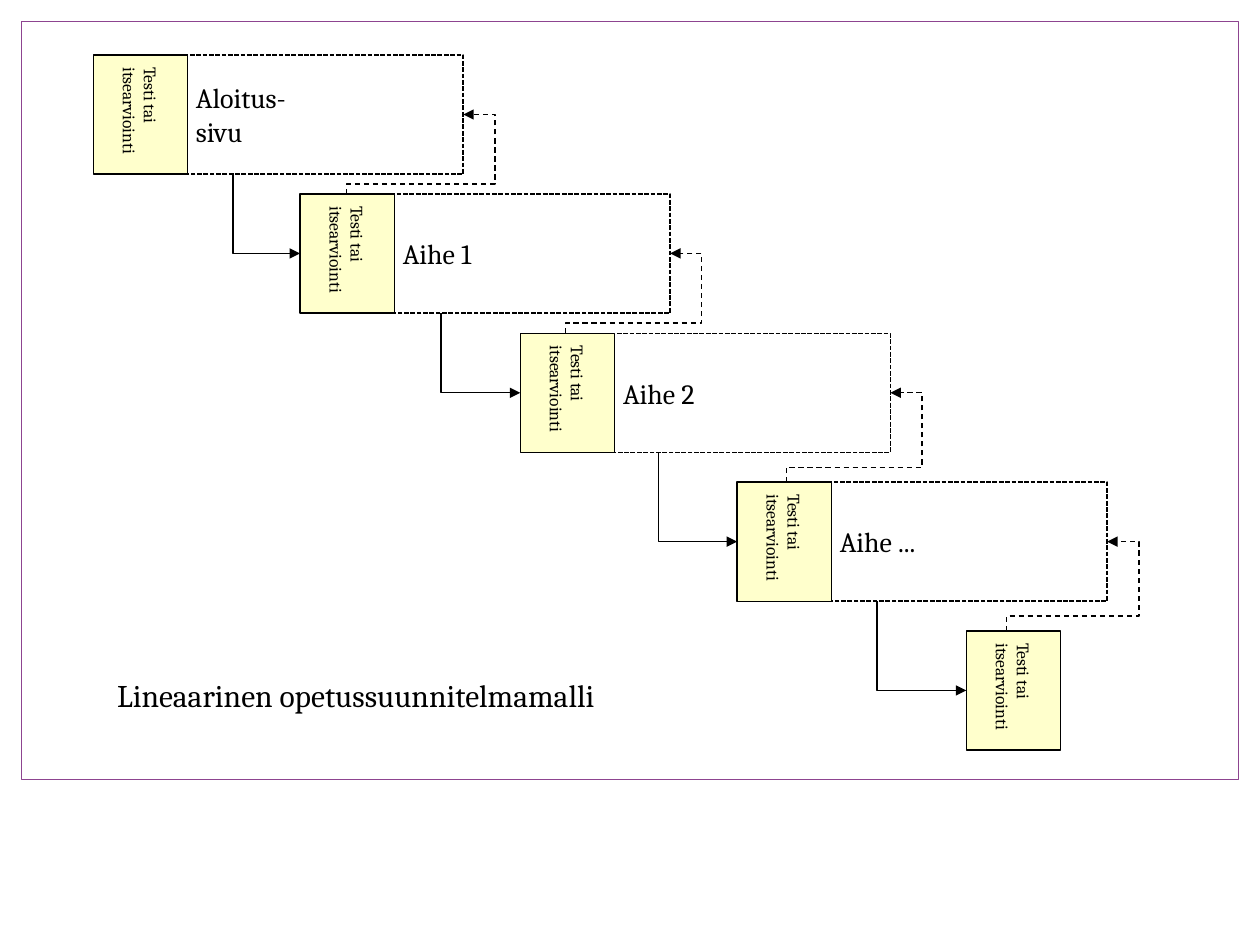
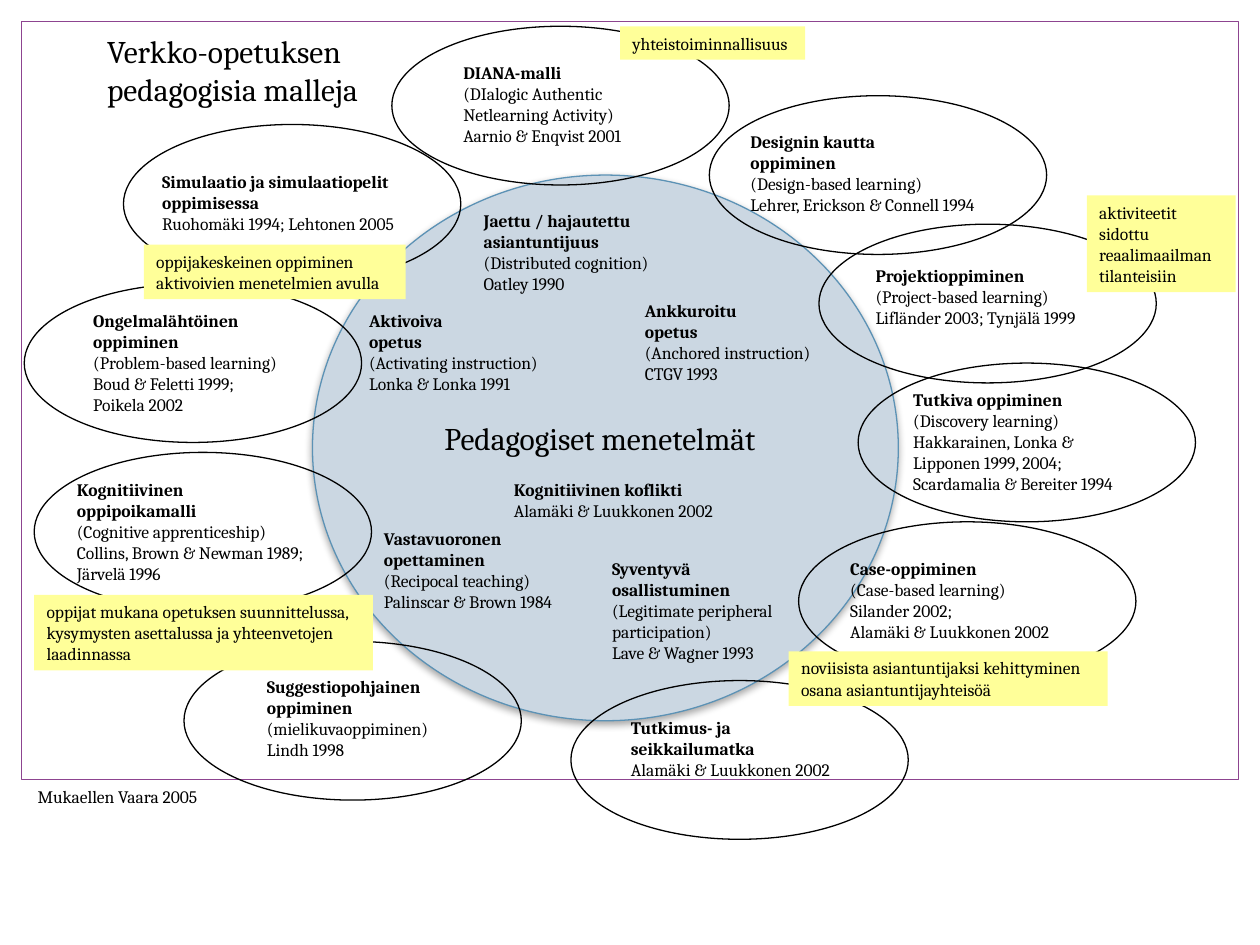
from typing import NamedTuple

from lxml import etree
from pptx import Presentation
from pptx.dml.color import RGBColor
from pptx.enum.dml import MSO_LINE
from pptx.enum.shapes import MSO_CONNECTOR, MSO_SHAPE
from pptx.enum.text import MSO_ANCHOR, MSO_AUTO_SIZE, PP_ALIGN
from pptx.oxml.ns import qn
from pptx.util import Cm, Pt

ELBOW = MSO_CONNECTOR.ELBOW
RECT, OVAL, PROCESS = MSO_SHAPE.RECTANGLE, MSO_SHAPE.OVAL, MSO_SHAPE.FLOWCHART_PROCESS
DASH, DOTS = MSO_LINE.DASH, MSO_LINE.SQUARE_DOT
TOP, MIDDLE = MSO_ANCHOR.TOP, MSO_ANCHOR.MIDDLE
LEFT, FIT = PP_ALIGN.LEFT, MSO_AUTO_SIZE.SHAPE_TO_FIT_TEXT

FONT = "Cambria"
BLACK, WHITE, PURPLE = "000000", "FFFFFF", "8D4490"
CREAM, YELLOW, PALE, BLUE = "FFFFCC", "FFFF99", "CBD7E2", "5C92B5"
BODY, TITLE = 10, 18
TEST_W, STEP_H = 1.9, 2.4
TOPIC_DX, TOPIC_W = 1.82, 5.64
LOOP_OUT = 0.64
RING_W, RING_H = 6.8, 3.2


class Box(NamedTuple):
    left: float
    top: float
    width: float
    height: float


class Step(NamedTuple):
    left: float
    top: float
    topic: list[str]
    down_x: float = 0
    back_x: float = 0

    @property
    def mid(self) -> float:
        return self.top + STEP_H / 2


class Label(NamedTuple):
    left: float
    top: float
    width: float
    head: list[str]
    body: list[str]
    ring: tuple[float, float] | None = None


class Note(NamedTuple):
    left: float
    top: float
    width: float
    lines: list[str]
    rows: int
    wrap: bool = False


STEPS = [
    Step(1.88, 1.11, ["Aloitus-", "sivu"], 4.7, 6.99),
    Step(6.05, 3.91, ["Aihe 1"], 8.89, 11.4),
    Step(10.49, 6.72, ["Aihe 2"], 13.28, 15.85),
    Step(14.86, 9.72, ["Aihe ..."], 17.68, 20.29),
    Step(19.48, 12.72, []),
]

LABELS = [
    Label(9.5, 4.11, 3.94, ["Jaettu / hajautettu", "asiantuntijuus"],
          ["(Distributed cognition)", "Oatley 1990"]),
    Label(10.11, 9.53, 4.78, ["Kognitiivinen koflikti"], ["Alamäki & Luukkonen 2002"]),
    Label(12.75, 5.92, 3.94, ["Ankkuroitu", "opetus"],
          ["(Anchored instruction)", "CTGV 1993"]),
    Label(12.09, 11.13, 4.01, ["Syventyvä", "osallistuminen"],
          ["(Legitimate peripheral", "participation)", "Lave & Wagner 1993"]),
    Label(7.49, 10.52, 4.27, ["Vastavuoronen", "opettaminen"],
          ["(Recipocal teaching)", "Palinscar & Brown 1984"]),
    Label(7.19, 6.12, 3.96, ["Aktivoiva", "opetus"],
          ["(Activating instruction)", "Lonka & Lonka 1991"]),
    Label(3.02, 3.33, 5.69, ["Simulaatio ja simulaatiopelit", "oppimisessa"],
          ["Ruohomäki 1994; Lehtonen 2005"], (2.49, 2.51)),
    Label(9.09, 1.12, 3.99, ["DIANA-malli"],
          ["(DIalogic Authentic", "Netlearning Activity)", "Aarnio & Enqvist 2001"],
          (7.9, 0.53)),
    Label(1.63, 6.12, 4.47, ["Ongelmalähtöinen", "oppiminen"],
          ["(Problem-based learning)", "Boud & Feletti 1999;", "Poikela 2002"],
          (0.49, 5.72)),
    Label(1.3, 9.53, 5.54, ["Kognitiivinen", "oppipoikamalli"],
          ["(Cognitive apprenticeship)", "Collins, Brown & Newman 1989;", "Järvelä 1996"],
          (0.69, 9.12)),
    Label(5.13, 13.51, 3.89, ["Suggestiopohjainen", "oppiminen"],
          ["(mielikuvaoppiminen)", "Lindh 1998"], (3.71, 12.93)),
    Label(12.47, 14.33, 4.78, ["Tutkimus- ja", "seikkailumatka"],
          ["Alamäki & Luukkonen 2002"], (11.51, 13.72)),
    Label(16.89, 11.13, 4.78, ["Case-oppiminen"],
          ["(Case-based learning)", "Silander 2002;", "Alamäki & Luukkonen 2002"],
          (16.1, 10.52)),
    Label(18.16, 7.72, 5, ["Tutkiva oppiminen"],
          ["(Discovery learning)", "Hakkarainen, Lonka &", "Lipponen 1999, 2004;",
           "Scardamalia & Bereiter 1994"], (17.3, 7.32)),
    Label(17.4, 5.21, 4.93, ["Projektioppiminen"],
          ["(Project-based learning)", "Lifländer 2003; Tynjälä 1999"], (16.51, 4.52)),
    Label(14.88, 2.51, 5.56, ["Designin kautta", "oppiminen"],
          ["(Design-based learning)", "Lehrer, Erickson & Connell 1994"], (14.3, 1.93)),
]

NOTES = [
    Note(15.9, 13.13, 6.43,
         ["noviisista asiantuntijaksi kehittyminen", "osana asiantuntijayhteisöä"], 2),
    Note(0.69, 11.99, 6.83,
         ["oppijat mukana opetuksen suunnittelussa, kysymysten asettalussa "
          "ja yhteenvetojen laadinnassa"], 3, True),
    Note(2.9, 4.93, 5.28,
         ["oppijakeskeinen oppiminen", "aktivoivien menetelmien avulla"], 2),
    Note(12.5, 0.53, 3.73, ["yhteistoiminnallisuus"], 1),
    Note(21.91, 3.94, 3,
         ["aktiviteetit", "sidottu", "reaalimaailman", "tilanteisiin"], 4, True),
]


def paint(code: str) -> RGBColor:
    return RGBColor.from_string(code)


def tall(rows: int, size: float) -> float:
    """Height in cm of a text box with the given number of lines."""
    return 0.25 + 0.0425 * size * rows


def draw(slide, kind, box: Box, fill=None, line=None, width=0.75, dash=None):
    shape = slide.shapes.add_shape(kind, *map(Cm, box))
    shape.shadow.inherit = False
    if fill:
        shape.fill.solid()
        shape.fill.fore_color.rgb = paint(fill)
    else:
        shape.fill.background()
    if line:
        shape.line.color.rgb = paint(line)
        shape.line.width = Pt(width)
        if dash:
            shape.line.dash_style = dash
    else:
        shape.line.fill.background()
    return shape


def write(shape, lines: list[str], size=BODY, bold=0, wrap=False, anchor=TOP) -> None:
    """Fill a shape with one paragraph a line; the first `bold` ones are bold."""
    frame = shape.text_frame
    frame.word_wrap = wrap
    frame.vertical_anchor = anchor
    for i, line in enumerate(lines):
        para = frame.add_paragraph() if i else frame.paragraphs[0]
        para.alignment = LEFT
        run = para.add_run()
        run.text = line
        run.font.name = FONT
        run.font.size = Pt(size)
        run.font.bold = i < bold
        run.font.color.rgb = paint(BLACK)


def label(slide, left: float, top: float, width: float, lines: list[str],
          size=BODY, bold=0) -> None:
    box = Box(left, top, width, tall(len(lines), size))
    shape = slide.shapes.add_textbox(*map(Cm, box))
    write(shape, lines, size, bold)
    shape.text_frame.auto_size = FIT


def bend(slide, start: tuple[float, float], end: tuple[float, float],
         preset: str, turn: dict[str, str], adjust=(), dash=None) -> None:
    """Draw an arrow that leaves upright, as a quarter-turned bent connector."""
    (x1, y1), (x2, y2) = start, end
    mid_x, mid_y = (x1 + x2) / 2, (y1 + y2) / 2
    half_w, half_h = abs(y2 - y1) / 2, abs(x2 - x1) / 2
    arrow = slide.shapes.add_connector(
        ELBOW, Cm(mid_x - half_w), Cm(mid_y - half_h),
        Cm(mid_x + half_w), Cm(mid_y + half_h))
    arrow.line.color.rgb = paint(BLACK)
    arrow.line.width = Pt(0.75)
    if dash:
        arrow.line.dash_style = dash
    props = arrow.element.spPr
    for key, value in turn.items():
        props.find(qn("a:xfrm")).set(key, value)
    shape = props.find(qn("a:prstGeom"))
    shape.set("prst", preset)
    guides = shape.find(qn("a:avLst"))
    for i, value in enumerate(adjust, 1):
        etree.SubElement(guides, qn("a:gd"), name=f"adj{i}",
                         fmla=f"val {round(value * 100000)}")
    etree.SubElement(props.find(qn("a:ln")), qn("a:tailEnd"), type="triangle")
    etree.SubElement(props, qn("a:effectLst"))


def link(slide, step: Step, after: Step) -> None:
    """Join two steps: a solid arrow forward and a dashed loop back."""
    bend(slide, (step.down_x, step.top + STEP_H), (after.left, after.mid),
         "bentConnector2", {"rot": "16200000", "flipH": "1"})
    right = step.left + TOPIC_DX + TOPIC_W
    gap = after.top - step.top - STEP_H
    adjust = (gap / 2 / (after.top - step.mid), 1 + LOOP_OUT / (right - step.back_x))
    bend(slide, (step.back_x, after.top), (right, step.mid), "bentConnector4",
         {"rot": "5400000", "flipH": "1", "flipV": "1"}, adjust, DASH)


def shade(shape) -> None:
    """Give a shape a soft shadow below it."""
    effects = shape.element.spPr.find(qn("a:effectLst"))
    shadow = etree.SubElement(effects, qn("a:outerShdw"), blurRad=str(Pt(4)),
                              dist=str(Pt(2)), dir="5400000", rotWithShape="0")
    color = etree.SubElement(shadow, qn("a:srgbClr"), val=BLACK)
    etree.SubElement(color, qn("a:alpha"), val="35000")


def start(deck):
    """Add a blank slide with the shared frame."""
    slide = deck.slides.add_slide(deck.slide_layouts[6])
    draw(slide, RECT, Box(0.43, 0.43, 24.54, 15.29), line=PURPLE)
    return slide


def linear(deck) -> None:
    slide = start(deck)
    # Topics
    for step in STEPS[:-1]:
        box = Box(step.left + TOPIC_DX, step.top, TOPIC_W, STEP_H)
        topic = draw(slide, PROCESS, box, WHITE, BLACK, 0.9, DOTS)
        write(topic, step.topic, 16, anchor=MIDDLE)
    # Tests
    for step in STEPS:
        test = draw(slide, PROCESS, Box(step.left, step.top, TEST_W, STEP_H), CREAM, BLACK)
        write(test, ["Testi tai", "itsearviointi"], anchor=MIDDLE)
        test.text_frame._txBody.bodyPr.set("vert", "eaVert")
    # Arrows
    for step, after in zip(STEPS, STEPS[1:]):
        link(slide, step, after)
    label(slide, 2.11, 13.51, 11, ["Lineaarinen opetussuunnitelmamalli"], TITLE)


def models(deck) -> None:
    slide = start(deck)
    # Core circle
    shade(draw(slide, OVAL, Box(6.3, 3.53, 11.81, 11), PALE, BLUE))
    # Models, some of them ringed
    for item in LABELS:
        label(slide, item.left, item.top, item.width, item.head + item.body,
              bold=len(item.head))
        if item.ring:
            draw(slide, OVAL, Box(*item.ring, RING_W, RING_H), line=BLACK)
    # Titles and source
    label(slide, 8.71, 8.33, 7.54, ["Pedagogiset menetelmät"], TITLE)
    label(slide, 1.91, 0.53, 6.12, ["Verkko-opetuksen", "pedagogisia malleja"], TITLE)
    label(slide, 0.51, 15.72, 4.01, ["Mukaellen Vaara 2005"])
    # Yellow notes
    for note in NOTES:
        box = Box(note.left, note.top, note.width, tall(note.rows, BODY))
        write(draw(slide, RECT, box, YELLOW), note.lines, wrap=note.wrap)


def main() -> None:
    deck = Presentation()
    deck.slide_width, deck.slide_height = Cm(25.4), Cm(19.05)
    linear(deck)
    models(deck)
    deck.save("out.pptx")


if __name__ == "__main__":
    main()
